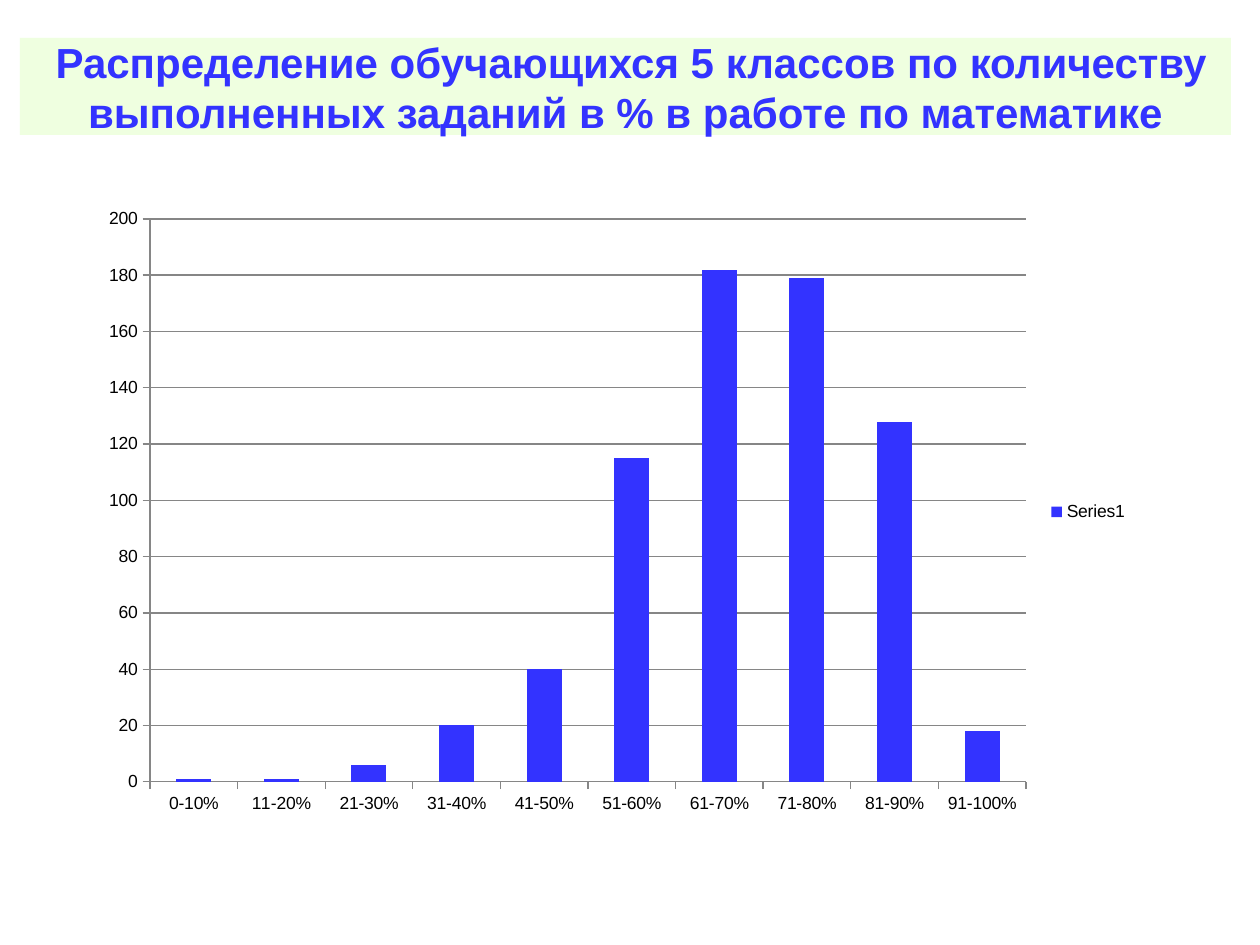
import pptx
import pptx.util
import pptx.oxml.ns
import pptx.oxml.xmlchemy
import pptx.chart.data
import pptx.dml.color
import pptx.enum.chart
import pptx.enum.shapes
import pptx.enum.text

SCALE = 914400 // 126
HUES = {"blue": "3333FF", "lime": "CCFF99", "grey": "868686", "black": "000000"}
TITLE = (" Распределение обучающихся 5 классов по количеству "
         "выполненных заданий в % в работе по математике")
BANDS = ["0-10%"] + [f"{low}1-{low + 1}0%" for low in range(1, 10)]
COUNTS = [1, 1, 6, 20, 40, 115, 182, 179, 128, 18]
CHART = (88, 197, 1053, 630)
PLOT = (150, 219, 876, 563)


def px(*sizes):
    """Turn pixel lengths into EMU."""
    return [size * SCALE for size in sizes]


def hue(name):
    """Return the named colour."""
    return pptx.dml.color.RGBColor.from_string(HUES[name])


def put(item, values):
    """Set the attributes of an item from a dict."""
    for name, value in values.items():
        setattr(item, name, value)


def add_node(parent, tag, value=None):
    """Append an XML element, with its val if given."""
    node = pptx.oxml.xmlchemy.OxmlElement(tag)
    if value is not None:
        node.set("val", value)
    parent.append(node)
    return node


def style(font, size, color, bold=False):
    """Format a font."""
    put(font, {"name": "Arial", "size": pptx.util.Pt(size), "bold": bold})
    font.color.rgb = hue(color)


def paint(fill, color):
    """Give a solid fill."""
    fill.solid()
    fill.fore_color.rgb = hue(color)


def fade(shape, alpha):
    """Set the opacity of a shape's fill in percent."""
    tone = shape._element.spPr.find(".//" + pptx.oxml.ns.qn("a:srgbClr"))
    add_node(tone, "a:alpha", str(alpha * 1000))


def add_title(slide, box, text):
    """Add the tinted title band."""
    band = slide.shapes.add_shape(pptx.enum.shapes.MSO_SHAPE.RECTANGLE, *px(*box))
    band.shadow.inherit = False
    paint(band.fill, "lime")
    fade(band, 30)
    band.line.fill.background()
    frame = band.text_frame
    put(frame, {"word_wrap": True,
                "vertical_anchor": pptx.enum.text.MSO_ANCHOR.MIDDLE})
    para = frame.paragraphs[0]
    para.alignment = pptx.enum.text.PP_ALIGN.CENTER
    run = para.add_run()
    run.text = text
    style(run.font, 24, "blue", True)


def lay_plot(chart, box, plot):
    """Fix the inner plot area inside the chart box."""
    left, top, width, height = box
    shares = {"x": (plot[0] - left) / width, "y": (plot[1] - top) / height,
              "w": plot[2] / width, "h": plot[3] / height}
    values = {"layoutTarget": "inner", "xMode": "edge", "yMode": "edge"}
    values.update({name: f"{share:.4f}" for name, share in shares.items()})
    area = chart._chartSpace.chart.plotArea
    for old in area.findall(pptx.oxml.ns.qn("c:layout")):
        area.remove(old)
    layout = add_node(area, "c:layout")
    area.insert(0, layout)
    manual = add_node(layout, "c:manualLayout")
    for name, value in values.items():
        add_node(manual, "c:" + name, value)


def trim(line):
    """Format an axis or grid line."""
    line.color.rgb = hue("grey")
    line.width = pptx.util.Pt(0.75)


def add_chart(slide, box, plot):
    """Add the column chart of pupils per band."""
    kinds = pptx.enum.chart
    data = pptx.chart.data.CategoryChartData()
    data.categories = BANDS
    data.add_series("Series1", COUNTS)
    chart = slide.shapes.add_chart(
        kinds.XL_CHART_TYPE.COLUMN_CLUSTERED, *px(*box), data).chart
    put(chart, {"has_title": False, "has_legend": True})
    put(chart.legend, {"position": kinds.XL_LEGEND_POSITION.RIGHT,
                       "include_in_layout": False})
    style(chart.font, 10, "black")
    put(chart.plots[0], {"gap_width": 150, "vary_by_categories": False})
    paint(chart.plots[0].series[0].format.fill, "blue")
    for axis in (chart.category_axis, chart.value_axis):
        put(axis, {"major_tick_mark": kinds.XL_TICK_MARK.OUTSIDE,
                   "minor_tick_mark": kinds.XL_TICK_MARK.NONE})
        trim(axis.format.line)
    put(chart.value_axis, {"minimum_scale": 0, "maximum_scale": 200,
                           "major_unit": 20, "has_major_gridlines": True})
    trim(chart.value_axis.major_gridlines.format.line)
    lay_plot(chart, box, plot)


def main():
    """Build and save the slide."""
    deck = pptx.Presentation()
    width, height = px(1260, 945)
    put(deck, {"slide_width": width, "slide_height": height})
    slide = deck.slides.add_slide(deck.slide_layouts[6])
    add_title(slide, (20, 38, 1211, 97), TITLE)
    add_chart(slide, CHART, PLOT)
    deck.save("out.pptx")


if __name__ == "__main__":
    main()
